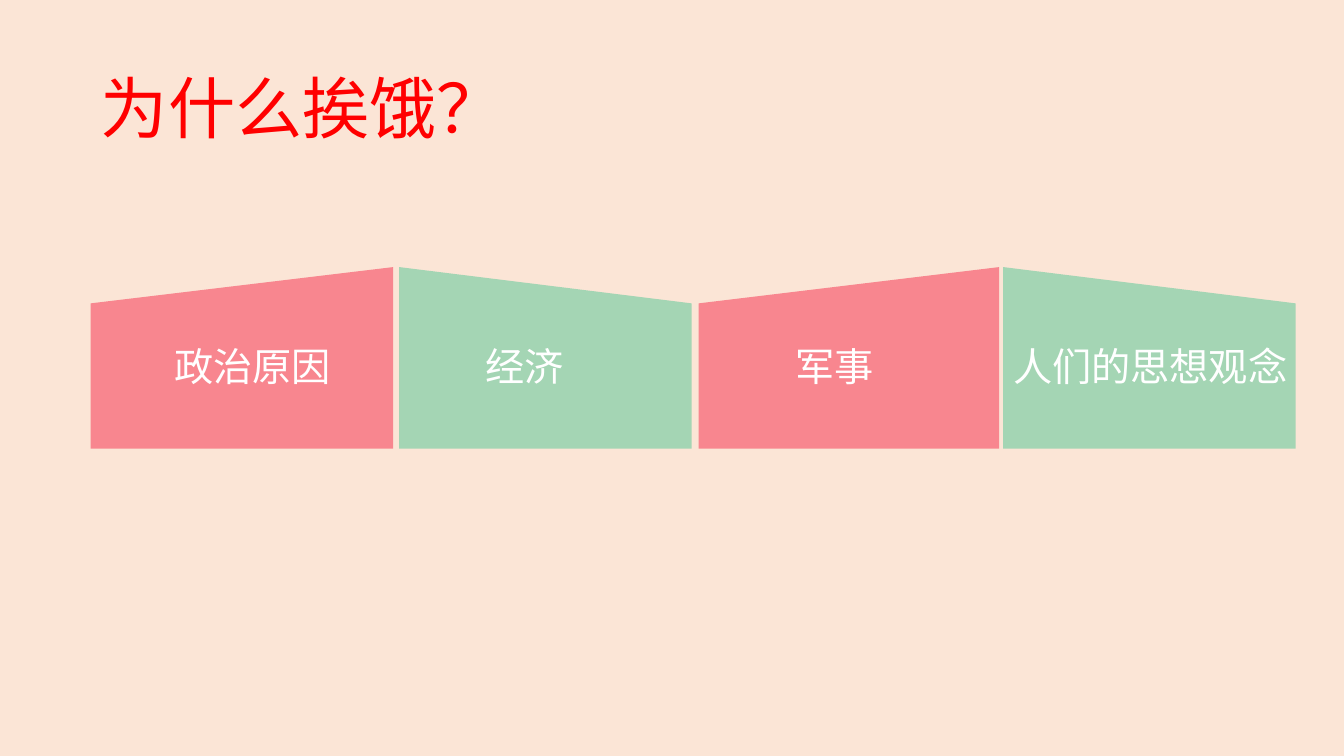
import pptx
import pptx.util
import pptx.dml.color
import pptx.enum.shapes
import pptx.enum.text
import pptx.oxml
import pptx.oxml.ns
import lxml.etree

SCALE = 9144  # EMU per px, 100 px to the inch
COLORS = {"back": "FBE5D6", "pink": "F8868F", "green": "A4D5B4",
          "white": "FFFFFF", "red": "FF0000"}


class Deck:
    font = "Noto Sans CJK SC"

    def __init__(self, wide, high):
        self.file = pptx.Presentation()
        self.file.slide_width = wide * SCALE
        self.file.slide_height = high * SCALE

    def color(self, name):
        return pptx.dml.color.RGBColor.from_string(COLORS[name])

    def page(self, back):
        self.slide = self.file.slides.add_slide(self.file.slide_layouts[5])
        fill = self.slide.background.fill
        fill.solid()
        fill.fore_color.rgb = self.color(back)

    def letter(self, shape, text, size, color):
        frame = shape.text_frame
        form = {"word_wrap": True,
                "auto_size": pptx.enum.text.MSO_AUTO_SIZE.SHAPE_TO_FIT_TEXT,
                "vertical_anchor": pptx.enum.text.MSO_ANCHOR.TOP}
        for key, value in form.items():
            setattr(frame, key, value)
        line = frame.paragraphs[0]
        line.alignment = pptx.enum.text.PP_ALIGN.LEFT
        run = line.add_run()
        run.text = text
        form = {"name": self.font, "size": pptx.util.Pt(size)}
        for key, value in form.items():
            setattr(run.font, key, value)
        run.font.color.rgb = self.color(color)
        # East Asian typeface
        east = lxml.etree.SubElement(run.font._element, pptx.oxml.ns.qn("a:ea"))
        east.set("typeface", self.font)

    def title(self, box, text, size, color):
        shape = self.slide.shapes.title
        for key, value in zip(("left", "top", "width", "height"), box):
            setattr(shape, key, value * SCALE)
        self.letter(shape, text, size, color)

    def label(self, box, text, size, color):
        shape = self.slide.shapes.add_textbox(*(n * SCALE for n in box))
        self.letter(shape, text, size, color)

    def panel(self, box, color, flip):
        kind = pptx.enum.shapes.MSO_SHAPE.FLOWCHART_MANUAL_INPUT
        shape = self.slide.shapes.add_shape(kind, *(n * SCALE for n in box))
        shape.shadow.inherit = False
        shape.fill.solid()
        shape.fill.fore_color.rgb = self.color(color)
        shape.line.fill.background()
        if flip:
            shape._element.spPr.xfrm.set("flipH", "1")


def main():
    deck = Deck(1333, 750)
    deck.page("back")

    # Question
    deck.title((90, 61, 482, 91), "为什么挨饿？", 48, "red")

    # Causes: panel left and width, label left and width, text
    causes = [(90, 300, 163, 215, "政治原因"),
              (396, 290, 472, 179, "经济"),
              (693, 298, 779, 126, "军事"),
              (995, 290, 995, 312, "人们的思想观念")]
    for i, (left, wide, start, span, text) in enumerate(causes):
        flip = i % 2 == 1
        deck.panel((left, 265, wide, 180), "green" if flip else "pink", flip)
        deck.label((start, 335, span, 57), text, 28, "white")

    deck.file.save("out.pptx")


if __name__ == "__main__":
    main()
